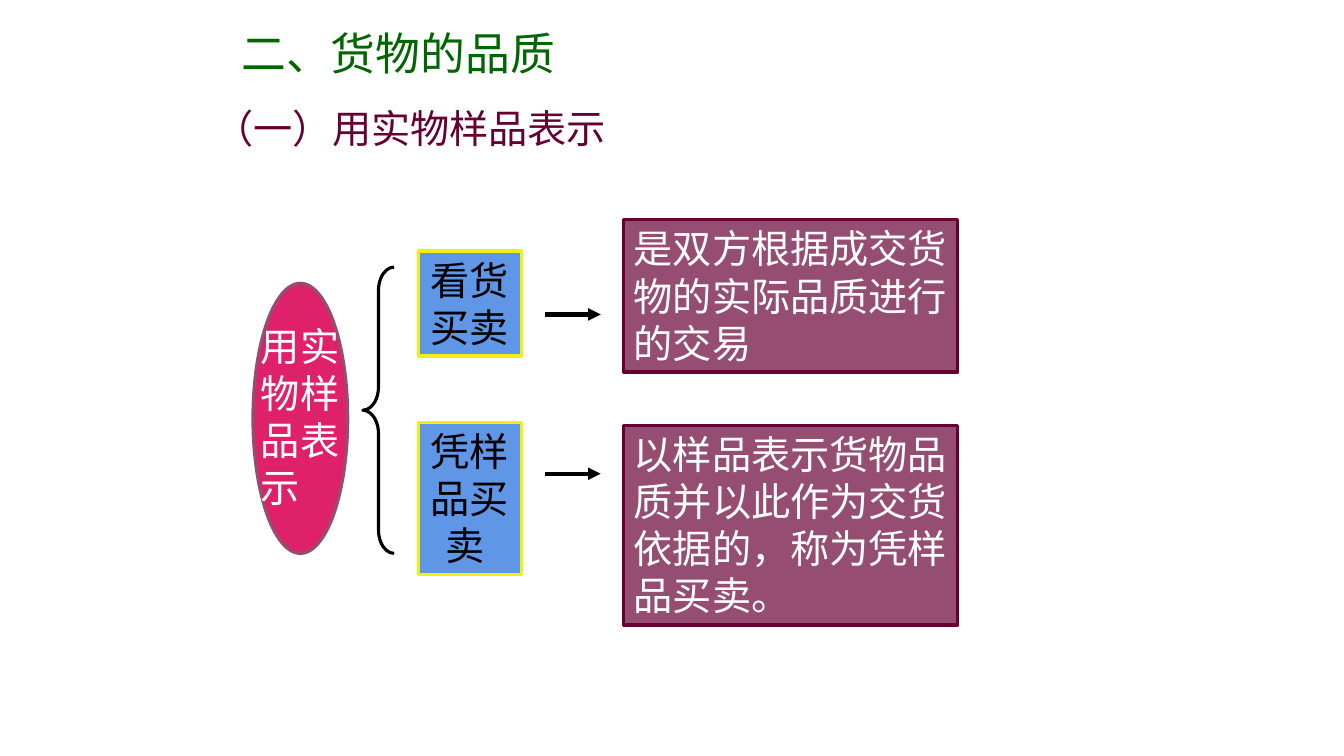
"""Build the slide on describing the quality of goods by physical samples."""

from dataclasses import dataclass

from lxml.etree import SubElement
from pptx import Presentation
from pptx.dml.color import RGBColor
from pptx.enum.shapes import MSO_CONNECTOR, MSO_SHAPE
from pptx.enum.text import MSO_ANCHOR, MSO_AUTO_SIZE, PP_ALIGN
from pptx.oxml.ns import qn
from pptx.shapes.autoshape import Shape
from pptx.shapes.shapetree import GroupShapes, SlideShapes
from pptx.util import Pt

FONT = "Arial"
BODY_SIZE = 28
BLACK, WHITE = "000000", "FFFFFF"
BLUE, YELLOW = "6096E6", "F3EE12"
PLUM, MAROON = "954D72", "660033"
PINK, GREEN = "DF2169", "006600"

METHOD_LEFT, METHOD_WIDTH = 298.8, 73.5
ARROW_LEFT, ARROW_RIGHT = 389.5, 429.1
MEANING_LEFT, MEANING_WIDTH = 445.7, 238.5


@dataclass(frozen=True)
class Area:
    left: float
    top: float
    width: float
    height: float


@dataclass(frozen=True)
class Style:
    color: str
    size: float = BODY_SIZE
    align: PP_ALIGN = PP_ALIGN.LEFT


@dataclass(frozen=True)
class Branch:
    method: str
    method_top: float
    method_height: float
    arrow_top: float
    meaning: str
    meaning_top: float
    meaning_height: float


BRANCHES = (
    Branch("看货买卖 ", 179.3, 75, 224.6,
           "是双方根据成交货物的实际品质进行的交易", 157, 108.8),
    Branch("凭样品买卖 ", 301.7, 108.8, 338.4,
           "以样品表示货物品质并以此作为交货依据的，称为凭样品买卖。", 303.8, 142.7),
)


def rgb(color: str) -> RGBColor:
    """Turn a hex string into a colour."""
    return RGBColor.from_string(color)


def write(shape: Shape, text: str, style: Style) -> None:
    """Put one wrapped paragraph into a shape."""
    frame = shape.text_frame
    frame.word_wrap = True
    frame.auto_size = MSO_AUTO_SIZE.SHAPE_TO_FIT_TEXT
    frame.vertical_anchor = MSO_ANCHOR.TOP
    paragraph = frame.paragraphs[0]
    paragraph.text = text
    paragraph.alignment = style.align
    paragraph.font.name = FONT
    paragraph.font.size = Pt(style.size)
    paragraph.font.color.rgb = rgb(style.color)


def add_text(shapes: SlideShapes | GroupShapes, area: Area, text: str, style: Style) -> None:
    """Add a text box."""
    box = shapes.add_textbox(Pt(area.left), Pt(area.top), Pt(area.width), Pt(area.height))
    write(box, text, style)


def add_outlined(shapes: GroupShapes, kind: MSO_SHAPE, area: Area,
                 line: str, fill: str | None = None) -> Shape:
    """Add a preset shape with an outline and an optional fill."""
    shape = shapes.add_shape(kind, Pt(area.left), Pt(area.top), Pt(area.width), Pt(area.height))
    shape.shadow.inherit = False
    if fill:
        shape.fill.solid()
        shape.fill.fore_color.rgb = rgb(fill)
    else:
        shape.fill.background()
    shape.line.color.rgb = rgb(line)
    shape.line.width = Pt(2.25)
    return shape


def add_arrow(shapes: GroupShapes, top: float) -> None:
    """Add a horizontal arrow between a method and its meaning."""
    arrow = shapes.add_connector(
        MSO_CONNECTOR.STRAIGHT, Pt(ARROW_LEFT), Pt(top), Pt(ARROW_RIGHT), Pt(top))
    arrow.line.color.rgb = rgb(BLACK)
    arrow.line.width = Pt(3)
    SubElement(arrow.line._get_or_add_ln(), qn("a:tailEnd"), type="triangle")
    SubElement(arrow._element.spPr, qn("a:effectLst"))


def add_branch(shapes: GroupShapes, branch: Branch) -> None:
    """Add a method box, its arrow and its meaning box."""
    method_area = Area(METHOD_LEFT, branch.method_top, METHOD_WIDTH, branch.method_height)
    method = add_outlined(shapes, MSO_SHAPE.RECTANGLE, method_area, YELLOW, BLUE)
    write(method, branch.method, Style(BLACK, align=PP_ALIGN.CENTER))
    add_arrow(shapes, branch.arrow_top)
    meaning_area = Area(MEANING_LEFT, branch.meaning_top, MEANING_WIDTH, branch.meaning_height)
    meaning = add_outlined(shapes, MSO_SHAPE.RECTANGLE, meaning_area, MAROON, PLUM)
    write(meaning, branch.meaning, Style(WHITE))


def main() -> None:
    """Build and save the deck."""
    deck = Presentation()
    deck.slide_width, deck.slide_height = Pt(960), Pt(540)
    page = deck.slides.add_slide(deck.slide_layouts[6])

    diagram = page.shapes.add_group_shape().shapes
    add_outlined(diagram, MSO_SHAPE.OVAL, Area(180.7, 202.3, 67.7, 193), PLUM, PINK)
    add_text(diagram, Area(179.3, 226.8, 79.2, 142.6), "用实物样品表示", Style(WHITE))
    brace = add_outlined(diagram, MSO_SHAPE.LEFT_BRACE, Area(259.2, 190.8, 22.3, 204.5), BLACK)
    brace.adjustments[0] = 0.75
    for branch in BRANCHES:
        add_branch(diagram, branch)

    add_text(page.shapes, Area(83.5, 15.1, 401.8, 46.1), "二、货物的品质",
             Style(GREEN, 32, PP_ALIGN.CENTER))
    add_text(page.shapes, Area(146.2, 71.3, 396.7, 74.9), "（一）用实物样品表示",
             Style(MAROON))
    deck.save("out.pptx")


if __name__ == "__main__":
    main()
